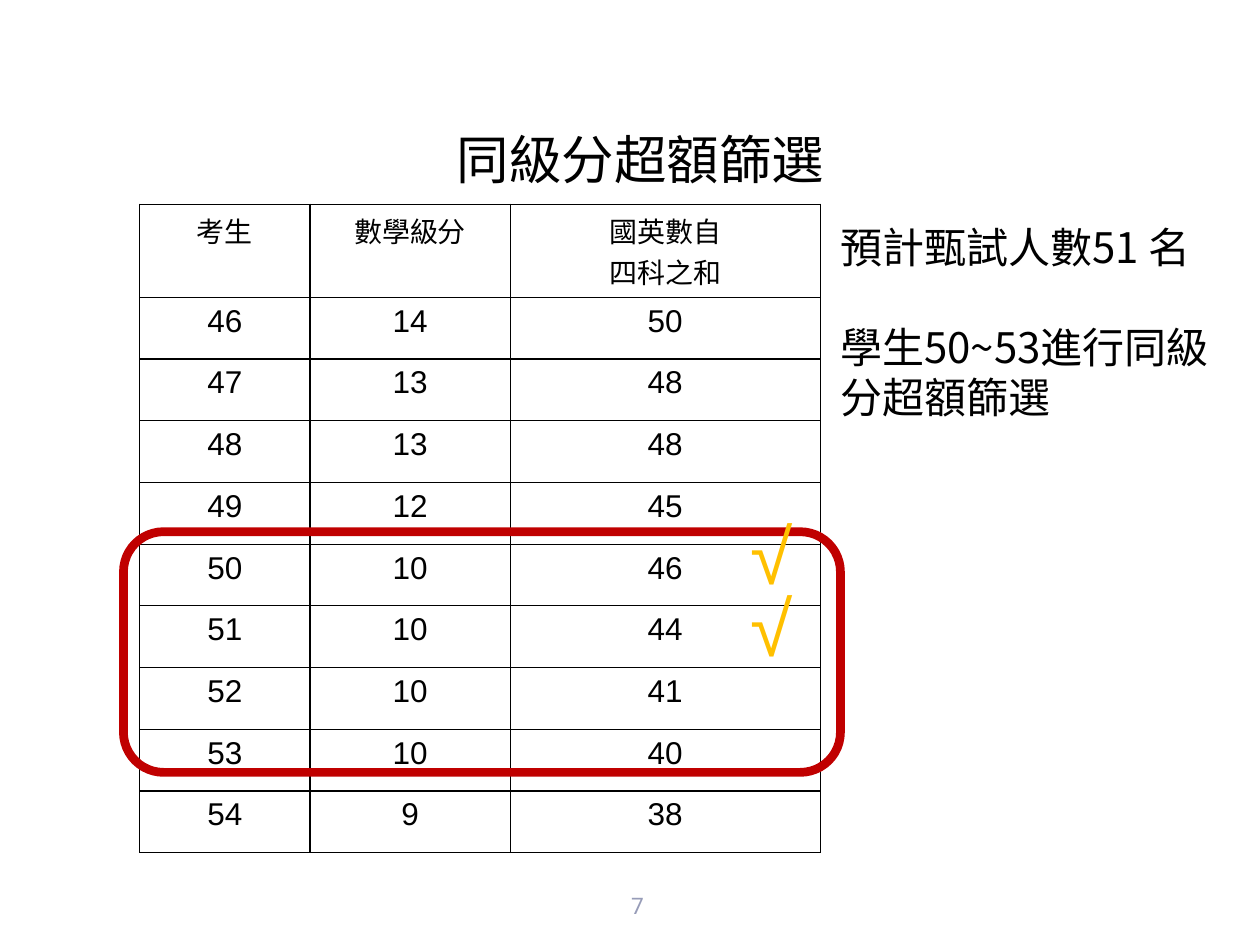
from lxml.etree import SubElement
from pptx import Presentation
from pptx.dml.color import RGBColor
from pptx.enum.shapes import MSO_SHAPE
from pptx.enum.text import MSO_ANCHOR, PP_ALIGN
from pptx.oxml.ns import qn
from pptx.util import Inches, Pt

COLORS = {"ink": "000000", "frame": "C00000", "check": "FFC000", "page": "979CB8"}
CJK = "Noto Sans CJK SC"
HEADERS = ["考生", "數學級分", "國英數自\n四科之和"]
SCORES = [(46, 14, 50), (47, 13, 48), (48, 13, 48), (49, 12, 45), (50, 10, 46),
          (51, 10, 44), (52, 10, 41), (53, 10, 40), (54, 9, 38)]
COLUMN_WIDTHS = [1.35, 1.59, 2.46]
HEADER_HEIGHT, ROW_HEIGHT = 0.74, 0.49


def rgb(name):
    return RGBColor.from_string(COLORS[name])


def write(frame, text, size, face, color="ink", align=PP_ALIGN.CENTER):
    frame.text = text
    for paragraph in frame.paragraphs:
        paragraph.alignment = align
        font = paragraph.font
        font.size, font.name = Pt(size), face
        font.color.rgb = rgb(color)
        # East Asian characters take their face from a separate element
        if face == CJK:
            SubElement(font._element, qn("a:ea"), typeface=face)


def add_text(slide, box, text, size, face, color="ink", align=PP_ALIGN.CENTER,
             anchor=MSO_ANCHOR.TOP, inset=0.1):
    frame = slide.shapes.add_textbox(*map(Inches, box)).text_frame
    frame.word_wrap = True
    frame.vertical_anchor = anchor
    frame.margin_left = frame.margin_right = Inches(0.1)
    frame.margin_top = frame.margin_bottom = Inches(inset)
    write(frame, text, size, face, color, align)
    return frame


def outline_cell(cell):
    properties = cell._tc.get_or_add_tcPr()
    for side in ("a:lnL", "a:lnR", "a:lnT", "a:lnB"):
        line = SubElement(properties, qn(side), w=str(Pt(0.75)))
        fill = SubElement(line, qn("a:solidFill"))
        SubElement(fill, qn("a:srgbClr"), val=COLORS["ink"])


def add_score_table(slide, left, top):
    rows = [HEADERS, *SCORES]
    height = HEADER_HEIGHT + ROW_HEIGHT * len(SCORES)
    table = slide.shapes.add_table(
        len(rows), len(HEADERS), Inches(left), Inches(top),
        Inches(sum(COLUMN_WIDTHS)), Inches(height)).table
    table.first_row = table.horz_banding = False
    for column, width in zip(table.columns, COLUMN_WIDTHS):
        column.width = Inches(width)
    for r, values in enumerate(rows):
        table.rows[r].height = Inches(ROW_HEIGHT if r else HEADER_HEIGHT)
        size, face = (18, "Arial") if r else (16, CJK)
        for c, value in enumerate(values):
            cell = table.cell(r, c)
            write(cell.text_frame, str(value), size, face)
            outline_cell(cell)
            cell.fill.background()


def add_tie_frame(slide, left, top, width, height):
    frame = slide.shapes.add_shape(MSO_SHAPE.ROUNDED_RECTANGLE,
                                   *map(Inches, (left, top, width, height)))
    frame.shadow.inherit = False
    frame.fill.background()
    frame.line.color.rgb = rgb("frame")
    frame.line.width = Pt(5)


def add_remarks(slide, box):
    remarks = add_text(slide, box, "預計甄試人數51 名\n學生50~53進行同級分超額篩選",
                       24, CJK, align=PP_ALIGN.LEFT, inset=0.05)
    for paragraph in remarks.paragraphs:
        paragraph.line_spacing = Pt(28.6)
    remarks.paragraphs[1].space_before = Pt(28.6)


def add_checks(slide, left, tops):
    for top in tops:
        add_text(slide, (left, top, 0.66, 0.84), "√", 44, "Arial", "check",
                 PP_ALIGN.LEFT, inset=0.05)


def main():
    deck = Presentation()
    deck.slide_width, deck.slide_height = Inches(10), Inches(7.5)
    slide = deck.slides.add_slide(deck.slide_layouts[6])

    # Page number and title
    add_text(slide, (4.76, 6.98, 0.6, 0.44), "7", 13, "Roboto", "page")
    add_text(slide, (1.21, 0.62, 7.75, 0.99), "同級分超額篩選", 30, "Roboto",
             anchor=MSO_ANCHOR.BOTTOM)
    # Scores, with the tied candidates framed and the admitted ones ticked
    add_score_table(slide, 1.11, 1.62)
    add_tie_frame(slide, 0.98, 4.22, 5.69, 1.91)
    add_remarks(slide, (6.57, 1.71, 3.28, 2.42))
    add_checks(slide, 5.86, (3.98, 4.55))

    deck.save("out.pptx")


if __name__ == "__main__":
    main()
